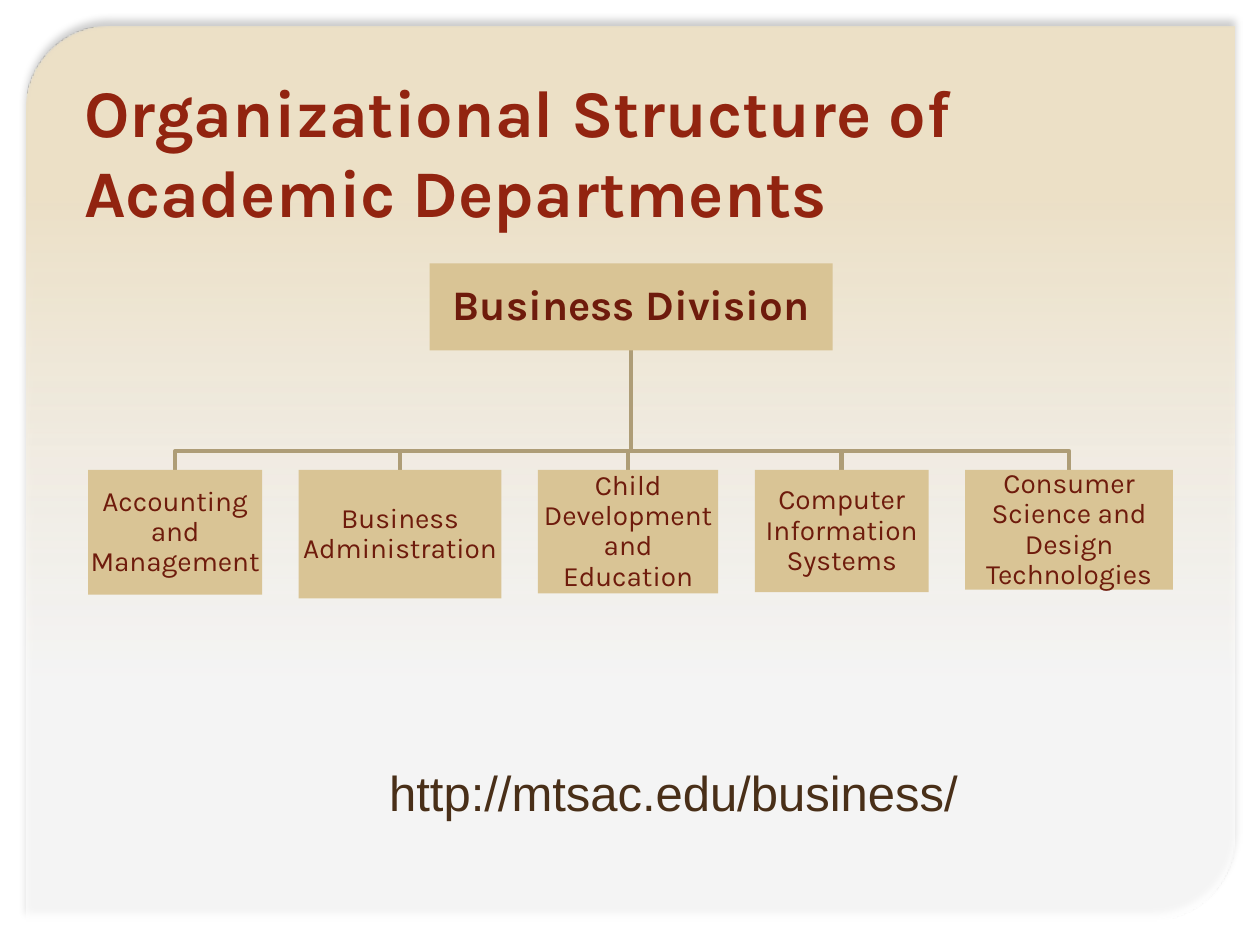
from lxml import etree
from pptx import Presentation
from pptx.dml.color import RGBColor
from pptx.enum.shapes import MSO_SHAPE
from pptx.enum.text import MSO_ANCHOR, PP_ALIGN
from pptx.oxml.ns import qn
from pptx.util import Inches, Pt

RECTANGLE = MSO_SHAPE.RECTANGLE
DIAGONAL_ROUNDED = MSO_SHAPE.ROUND_2_DIAG_RECTANGLE
LEFT, CENTER = PP_ALIGN.LEFT, PP_ALIGN.CENTER
TOP, MIDDLE, BOTTOM = MSO_ANCHOR.TOP, MSO_ANCHOR.MIDDLE, MSO_ANCHOR.BOTTOM
COLUMNS, ROWS = 100, 75


def color(value):
    return RGBColor.from_string(value)


def write_text(shape, text, size, ink, font="Karla", bold=False, align=LEFT,
               anchor=TOP, wrap=True, line_spacing=None, inset=None):
    frame = shape.text_frame
    frame.word_wrap = wrap
    frame.vertical_anchor = anchor
    if inset is not None:
        frame.margin_left = frame.margin_right = Inches(inset)
        frame.margin_top = frame.margin_bottom = Inches(inset)
    paragraph = frame.paragraphs[0]
    paragraph.alignment = align
    if line_spacing:
        paragraph.line_spacing = line_spacing
    run = paragraph.add_run()
    run.text = text
    run.font.name = font
    run.font.size = Pt(size)
    run.font.bold = bold
    run.font.color.rgb = color(ink)


class OrganizationSlide:
    title_ink = "922410"
    box_ink = "6E1B0C"
    link_ink = "492F18"
    box_fill = "D9C495"
    line_color = "AE9D77"

    def __init__(self, presentation):
        self.slide = presentation.slides.add_slide(presentation.slide_layouts[6])
        self.column = presentation.slide_width / COLUMNS
        self.row = presentation.slide_height / ROWS

    def point(self, column, row):
        return round(column * self.column), round(row * self.row)

    def area(self, left, top, width, height):
        return *self.point(left, top), *self.point(width, height)

    def panel(self, left, top, width, height):
        shape = self.slide.shapes.add_shape(
            DIAGONAL_ROUNDED, *self.area(left, top, width, height))
        shape.adjustments[0] = 0.094
        shape.adjustments[1] = 0
        shape.line.fill.background()
        shape.fill.gradient()
        shape.fill.gradient_angle = 270
        stops = shape.fill.gradient_stops
        for stop, position, value in zip(stops, (0.19, 0.73), ("ECE0C6", "FFFFFF")):
            stop.position = position
            stop.color.rgb = color(value)
        properties = shape._element.spPr
        white = properties.findall(".//" + qn("a:srgbClr"))[-1]
        etree.SubElement(white, qn("a:alpha"), val="67000")
        shape.shadow.inherit = False
        shadow = etree.SubElement(
            properties.find(qn("a:effectLst")), qn("a:outerShdw"),
            blurRad=str(Pt(4.2)), dist=str(Pt(3)), dir="16200000",
            rotWithShape="0")
        black = etree.SubElement(shadow, qn("a:srgbClr"), val="000000")
        etree.SubElement(black, qn("a:alpha"), val="20000")

    def label(self, text, left, top, width, height, **style):
        shape = self.slide.shapes.add_textbox(*self.area(left, top, width, height))
        write_text(shape, text, **style)

    def box(self, text, left, top, width, height, **style):
        shape = self.slide.shapes.add_shape(
            RECTANGLE, *self.area(left, top, width, height))
        shape.shadow.inherit = False
        shape.fill.solid()
        shape.fill.fore_color.rgb = color(self.box_fill)
        shape.line.fill.background()
        write_text(shape, text, ink=self.box_ink, align=CENTER, anchor=MIDDLE,
                   line_spacing=0.9, **style)

    def branch(self, *corners):
        points = [self.point(*corner) for corner in corners]
        builder = self.slide.shapes.build_freeform(*points[0])
        builder.add_line_segments(points[1:], close=False)
        shape = builder.convert_to_shape()
        shape.shadow.inherit = False
        shape.fill.background()
        shape.line.color.rgb = color(self.line_color)
        shape.line.width = Pt(2.5)


def main():
    presentation = Presentation()
    presentation.slide_width = Inches(10)
    presentation.slide_height = Inches(7.5)
    chart = OrganizationSlide(presentation)

    chart.panel(2.1, 2.1, 95.9, 70.9)
    chart.label("Organizational Structure of Academic Departments",
                5.7, 7.9, 86.2, 10.9, size=38, ink=chart.title_ink,
                bold=True, anchor=BOTTOM)

    departments = [
        ("Accounting and Management", 13.8, 9.9),
        ("Business Administration", 16.1, 10.2),
        ("Child Development and Education", 14.3, 9.8),
        ("Computer Information Systems", 13.8, 9.7),
        ("Consumer Science and Design Technologies", 16.5, 9.5),
    ]
    division_left, division_top, division_width, division_height = 34.1, 20.9, 32, 6.9
    division_center = division_left + division_width / 2
    division_bottom = division_top + division_height
    bend, department_top = 35.8, 37.3
    left, gap = 7, 2.9

    for name, width, height in departments:
        center = left + width / 2
        chart.branch((division_center, division_bottom), (division_center, bend),
                     (center, bend), (center, department_top))
        chart.box(name, left, department_top, width, height, size=16, inset=0.01)
        left += width + gap

    chart.box("Business Division", division_left, division_top, division_width,
              division_height, size=24, bold=True, inset=0.02)
    chart.label("http://mtsac.edu/business/", 29.6, 60, 47.7, 5.7, size=28,
                ink=chart.link_ink, font="Arial", align=CENTER, wrap=False)
    presentation.save("out.pptx")


if __name__ == "__main__":
    main()
